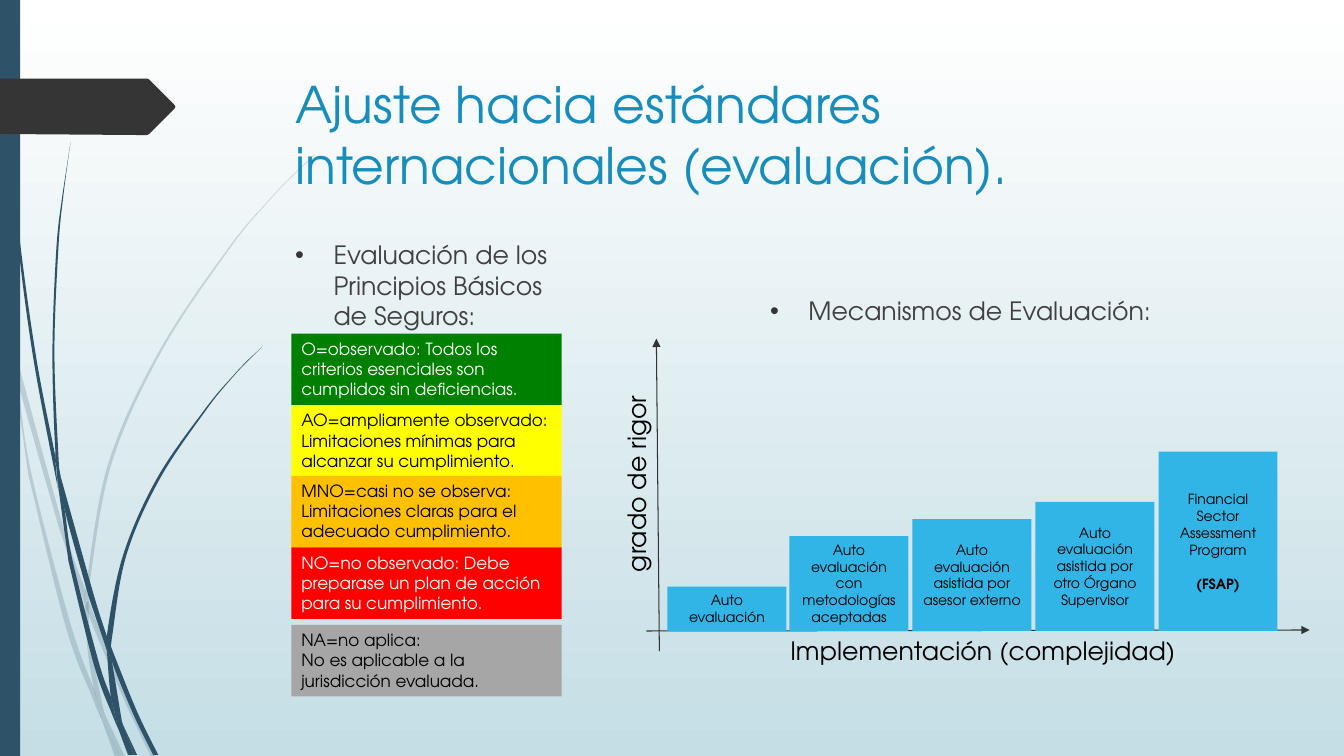
from lxml import etree
from pptx import Presentation
from pptx.dml.color import RGBColor
from pptx.enum.shapes import MSO_CONNECTOR as CONNECTOR, MSO_SHAPE as SHAPE
from pptx.enum.text import MSO_ANCHOR as ANCHOR, PP_ALIGN as ALIGN
from pptx.oxml.ns import qn
from pptx.util import Emu, Pt

PX = 9144  # 100 px to the inch
FONT = "TeX Gyre Adventor"
BLACK, WHITE = RGBColor(0, 0, 0), RGBColor(255, 255, 255)
SKY = RGBColor(0xC5, 0xDE, 0xE5)
NAVY = RGBColor(0x2E, 0x53, 0x69)
CHARCOAL = RGBColor(0x35, 0x35, 0x35)
AXIS = RGBColor(0x33, 0x33, 0x33)
TITLE_BLUE = RGBColor(0x17, 0x8D, 0xBB)
BODY_GREY = RGBColor(0x40, 0x40, 0x40)
BAR_BLUE = RGBColor(0x31, 0xB4, 0xE6)
GREEN = RGBColor(0, 0x80, 0)
YELLOW = RGBColor(255, 255, 0)
ORANGE = RGBColor(255, 0xC0, 0)
RED = RGBColor(255, 0, 0)
GREY = RGBColor(0xA6, 0xA6, 0xA6)

# Content
TITLE = "Ajuste hacia estándares internacionales (evaluación)."
BULLETS = [  # text, box
    ("Evaluación de los Principios Básicos de Seguros:", (283, 233, 280, 100)),
    ("Mecanismos de Evaluación:", (754, 288, 418, 42)),
]
RATINGS = [  # paragraphs, fill, text colour
    (["O=observado: Todos los criterios esenciales son cumplidos sin deficiencias."], GREEN, WHITE),
    (["AO=ampliamente observado: Limitaciones mínimas para alcanzar su cumplimiento."], YELLOW, BLACK),
    (["MNO=casi no se observa: Limitaciones claras para el adecuado cumplimiento."], ORANGE, BLACK),
    (["NO=no observado: Debe preparase un plan de acción para su cumplimiento."], RED, WHITE),
    (["NA=no aplica:", "No es aplicable a la jurisdicción evaluada."], GREY, BLACK),
]
BARS = [  # paragraphs, height in text lines, lines left free on top
    (["Auto", "evaluación"], 2, 0),
    (["Auto", "evaluación con metodologías aceptadas"], 5, 0),
    (["Auto", "evaluación asistida por asesor externo"], 6, 1),
    (["Auto", "evaluación asistida por otro Órgano Supervisor"], 7, 1),
    (["Financial Sector Assessment Program", "(FSAP)"], 10, 2),
]
AXES = [((654, 646), (651, 336)), ((641, 626), (1299, 625))]
AXIS_TITLES = [  # text, box, rotation
    ("grado de rigor", (533, 459, 197, 40), 270),
    ("Implementación (complejidad)", (774, 625, 406, 40), 0),
]
# Grass blade pieces: the two edges of each, as knots of a smooth curve
PALE_BLADES = [
    ([(11, 350), (9, 322), (0, 282)], [(0, 299), (10, 344), (11, 350)]),
    ([(58, 522), (84, 599)], [(85, 586), (62, 520), (14, 345), (17, 376), (58, 522)]),
    ([(92, 607), (88, 596), (88, 610), (123, 694), (150, 751)], [(155, 751), (127, 692), (92, 607)]),
    ([(119, 751), (124, 751)], [(105, 711), (119, 751)]),
    ([(93, 683), (70, 619), (31, 469), (17, 376), (11, 350)],
     [(28, 470), (65, 621), (92, 693), (101, 714), (99, 707), (93, 683)]),
    ([(84, 599), (87, 646), (93, 683), (96, 692), (105, 711)],
     [(103, 706), (91, 646), (88, 610), (88, 608), (84, 599)]),
    ([(88, 584), (110, 462), (160, 349), (229, 245), (268, 198), (290, 175), (312, 154)],
     [(312, 153), (289, 175), (268, 197), (228, 244), (158, 348), (107, 461), (85, 584),
      (85, 586), (88, 596), (88, 584)]),
    ([(101, 714), (114, 751)], [(119, 751), (101, 714)]),
    ([(88, 608), (88, 610), (88, 596)], [(85, 586), (84, 599), (88, 608)]),
    ([(96, 692), (93, 683), (99, 707), (101, 714), (119, 751)], [(105, 711), (96, 692)]),
]
DARK_BLADES = [
    ([(7, 110), (17, 233), (33, 355), (56, 477), (57, 481)],
     [(55, 457), (55, 453), (36, 355), (19, 232), (8, 109), (5, 48), (4, 0), (3, 0), (4, 48), (7, 110)]),
    ([(88, 592), (106, 645)], [(106, 633), (106, 631), (93, 590), (60, 472), (64, 505), (88, 592)]),
    ([(113, 649), (110, 641), (111, 656), (132, 708), (152, 749)], [(157, 749), (136, 706), (113, 649)]),
    ([(110, 691), (98, 657), (72, 556), (64, 505), (57, 477)],
     [(68, 557), (93, 659), (111, 708), (117, 722), (116, 717), (110, 691)]),
    ([(60, 472), (58, 453), (54, 349), (58, 245), (63, 193), (70, 141)],
     [(62, 193), (56, 245), (52, 349), (55, 449), (60, 472)]),
    ([(133, 749), (136, 749)], [(122, 719), (133, 749)]),
    ([(57, 477), (64, 505)], [(60, 472), (55, 449), (55, 453), (57, 477)]),
    ([(111, 633), (125, 552), (158, 476), (205, 406), (231, 374), (245, 359), (260, 344)],
     [(245, 358), (231, 373), (204, 405), (156, 474), (122, 551), (106, 631), (110, 641), (111, 633)]),
    ([(117, 722), (127, 749)], [(131, 749), (117, 722)]),
    ([(106, 645), (110, 691), (116, 706), (122, 719)],
     [(121, 716), (111, 656), (109, 651), (106, 645)]),
    ([(106, 645), (109, 651), (111, 656)], [(110, 641), (106, 631), (106, 633), (106, 645)]),
    ([(116, 706), (110, 691), (116, 717), (117, 722), (130, 749)], [(133, 749), (122, 719), (116, 706)]),
]
ARROW_TAG = [(0, 78), (146, 78), (148, 79), (173, 104), (174, 106), (173, 108),
             (148, 133), (146, 134), (136, 134), (0, 133)]


def lengths(*values):
    return [Emu(value * PX) for value in values]


def paint(shape, color):
    shape.shadow.inherit = False
    shape.fill.solid()
    shape.fill.fore_color.rgb = color
    shape.line.fill.background()


def curve_points(edge):
    """Two handles and an end for each span between the knots."""
    padded = [edge[0], *edge, edge[-1]]
    points = []
    for a, b, c, d in zip(padded, padded[1:], padded[2:], padded[3:]):
        # A sharp turn gets no handle of its own
        turn_b = (b[0] - a[0]) * (c[0] - b[0]) + (b[1] - a[1]) * (c[1] - b[1]) > 0
        turn_c = (c[0] - b[0]) * (d[0] - c[0]) + (c[1] - b[1]) * (d[1] - c[1]) > 0
        start, end = a if turn_b else b, d if turn_c else c
        points += [tuple(q + (r - p) / 6 for p, q, r in zip(start, b, c)),
                   tuple(r - (s - q) / 6 for q, r, s in zip(b, c, end)), c]
    return points


def add_outline(points, color):
    builder = slide.shapes.build_freeform(*(round(v * PX) for v in points[0]))
    builder.add_line_segments([(round(x * PX), round(y * PX)) for x, y in points[1:]])
    shape = builder.convert_to_shape()
    paint(shape, color)
    return shape


def add_blade(edge, other_edge, alpha):
    points = [edge[0], *curve_points(edge)]
    if other_edge[0] != edge[-1]:
        points += [edge[-1], other_edge[0], other_edge[0]]
    properties = add_outline(points + curve_points(other_edge), NAVY)._element.spPr
    # Join every three points into one curve
    lines = list(properties.iter(qn("a:lnTo")))
    for first, second, third in zip(lines[::3], lines[1::3], lines[2::3]):
        first.tag = qn("a:cubicBezTo")
        for line in (second, third):
            first.append(line[0])
            line.getparent().remove(line)
    if alpha < 100:
        rgb = properties.find(".//" + qn("a:srgbClr"))
        etree.SubElement(rgb, qn("a:alpha"), val=str(alpha * 1000))


def add_box(box, color):
    shape = slide.shapes.add_shape(SHAPE.RECTANGLE, *lengths(*box))
    paint(shape, color)
    return shape


def write(shape, texts, size, color, align=ALIGN.LEFT, wrap=True):
    frame = shape.text_frame
    frame.word_wrap = wrap
    frame.vertical_anchor = ANCHOR.TOP
    for index, text in enumerate(texts):
        paragraph = frame.add_paragraph() if index else frame.paragraphs[0]
        paragraph.alignment = align
        run = paragraph.add_run()
        run.text = text
        run.font.name, run.font.size = FONT, Pt(size)
        run.font.color.rgb = color
    return frame.paragraphs


def add_text(box, text, size, color, wrap=True):
    shape = slide.shapes.add_textbox(*lengths(*box))
    return shape, write(shape, [text], size, color, wrap=wrap)[0]


presentation = Presentation()
presentation.slide_width, presentation.slide_height = lengths(1333, 750)
slide = presentation.slides.add_slide(presentation.slide_layouts[6])
# Background
background = slide.background.fill
background.gradient()
background.gradient_angle = 270
for stop, position, color in zip(background.gradient_stops, (0, 1), (WHITE, SKY)):
    stop.position, stop.color.rgb = position, color
# Left decoration
for blades, alpha in ((PALE_BLADES, 20), (DARK_BLADES, 100)):
    for edges in blades:
        add_blade(*edges, alpha)
add_box((0, 0, 20, 750), NAVY)
add_outline(ARROW_TAG, CHARCOAL)
# Title and bullets
add_text((283, 68, 975, 140), TITLE, 36, TITLE_BLUE)
for text, box in BULLETS:
    properties = add_text(box, text, 18, BODY_GREY)[1]._p.get_or_add_pPr()
    properties.set("marL", str(38 * PX))
    properties.set("indent", str(-38 * PX))
    etree.SubElement(etree.SubElement(properties, qn("a:buClr")), qn("a:srgbClr"), val=str(CHARCOAL))
    etree.SubElement(properties, qn("a:buFont"), typeface="Arial")
    etree.SubElement(properties, qn("a:buChar"), char="•")
# Rating scale, the last one set apart
for index, (texts, fill, color) in enumerate(RATINGS):
    gap = 6 if index == len(RATINGS) - 1 else 0
    write(add_box((289, 331 + round(212 * index / 3) + gap, 268, 71), fill), texts, 12, color)
# Axes
for start, end in AXES:
    axis = slide.shapes.add_connector(CONNECTOR.STRAIGHT, *lengths(*start, *end))
    axis.line.color.rgb, axis.line.width = AXIS, Pt(0.75)
    etree.SubElement(axis.line._get_or_add_ln(), qn("a:tailEnd"), type="triangle")
    etree.SubElement(axis._element.spPr, qn("a:effectLst"))
for text, box, rotation in AXIS_TITLES:
    add_text(box, text, 18, BLACK, wrap=False)[0].rotation = rotation
# Bars, as tall as their lines of text
for index, (texts, line_count, free_lines) in enumerate(BARS):
    height = round(10 + 16.8 * line_count)
    bar = add_box((662 + 487 * index // 4, 626 - height, 118, height), BAR_BLUE)
    paragraphs = write(bar, texts, 10, BLACK, ALIGN.CENTER)
    bar.text_frame.margin_top = Emu((5 + 17 * free_lines) * PX)
paragraphs[-1].space_before = Pt(12)
paragraphs[-1].runs[0].font.bold = True
presentation.save("out.pptx")
